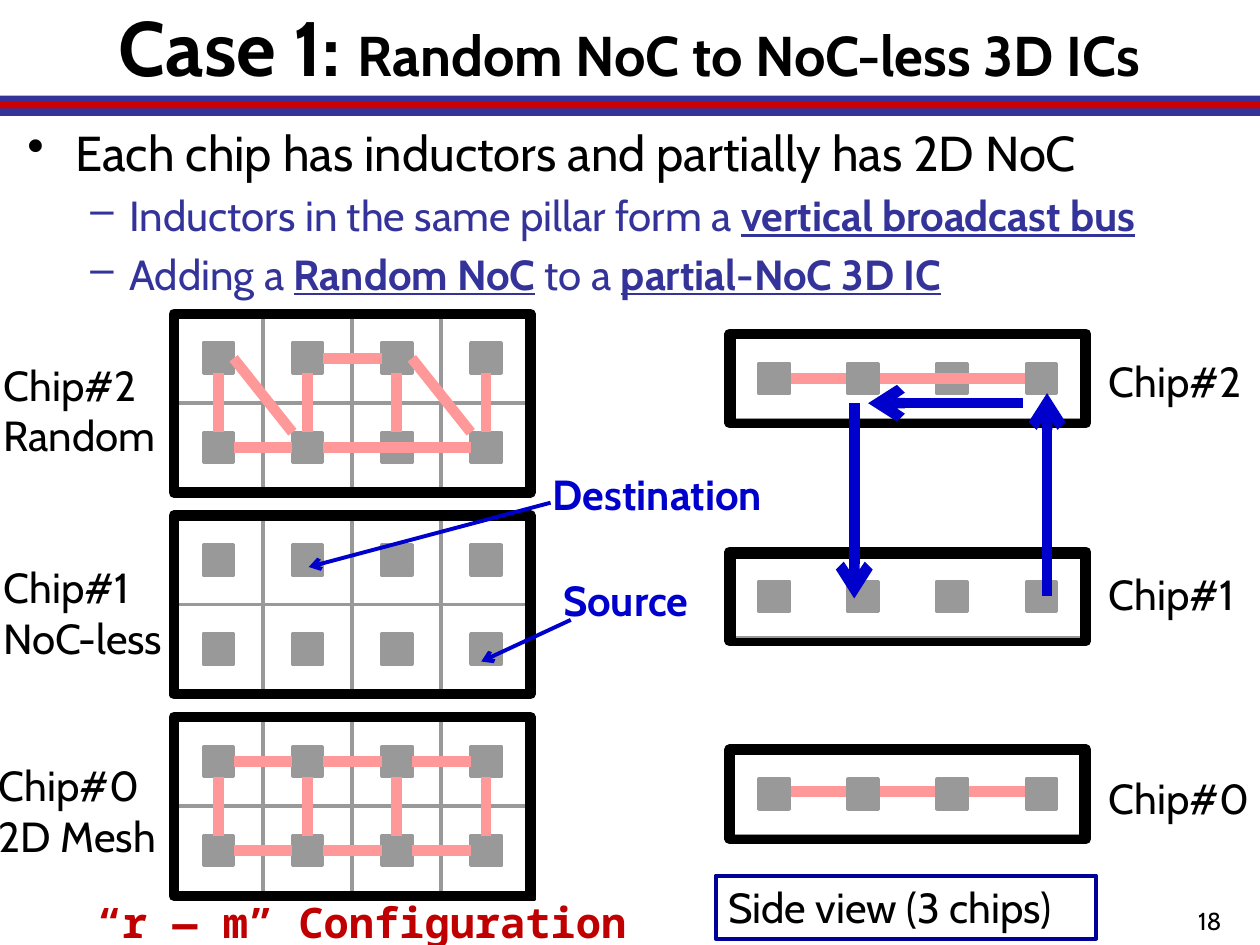
"""Build the slide on adding a random NoC to NoC-less 3D ICs."""
from dataclasses import dataclass

from lxml import etree
from pptx import Presentation
from pptx import util as u
from pptx.dml.color import RGBColor
from pptx.enum import shapes as s
from pptx.enum import text as t
from pptx.oxml.ns import qn

COLORS = {
    "black": "000000", "white": "FFFFFF", "link": "FF0000", "path": "0000CC",
    "bar": "333399", "stripe": "CC0000", "caption": "C00000", "border": "000099",
}
FONT = "Cabin"
COLUMNS, ROWS = 4, 2
CHIP_WIDTH, CHIP_HEIGHT = 2.83, 1.42
PITCH = CHIP_WIDTH / COLUMNS
NODE = 0.24
INSET = (PITCH - NODE) / 2
CHIP_LEFT, SIDE_LEFT = 1.38, 5.79

Point = tuple[float, float]
Node = tuple[int, int]


@dataclass(frozen=True)
class Chip:
    top: float
    links: tuple[tuple[Node, Node], ...] = ()
    veil_shift: Point = (0, 0)


@dataclass(frozen=True)
class SideChip:
    top: float
    veil_left: float
    veil_top: float
    nodes_below_link: int = 0
    linked: bool = False


@dataclass(frozen=True)
class Label:
    left: float
    top: float
    width: float
    height: float
    lines: tuple[str, ...]
    color: str = "black"
    bold: bool = False
    font: str = FONT
    size: float = 24


@dataclass(frozen=True)
class Arrow:
    tip: Point
    tail: Point
    weight: float = 6


@dataclass(frozen=True)
class Bullet:
    mark: str
    margin: float
    indent: float
    size: float
    color: str
    runs: tuple[tuple[str, bool], ...]


MESH = tuple(((c, r), (c + 1, r)) for r in range(ROWS) for c in range(COLUMNS - 1)) + tuple(
    ((c, 0), (c, 1)) for c in range(COLUMNS))
RANDOM = tuple(((c, 0), (c, 1)) for c in range(COLUMNS)) + (
    ((1, 0), (2, 0)), ((0, 1), (1, 1)), ((1, 1), (3, 1)),
    ((0, 0), (1, 1)), ((2, 0), (3, 1)))
CHIPS = (Chip(2.49, RANDOM), Chip(4.09, (), (0, 0.02)), Chip(5.69, MESH, (0.03, 0.03)))
SIDE_CHIPS = (SideChip(2.65, 5.83, 2.68, 3, True), SideChip(4.38, 5.83, 4.42),
              SideChip(5.95, 5.82, 5.98, 0, True))
LABELS = (
    Label(-0.07, 2.8, 2.08, 0.91, ("Chip#2", "Random")),
    Label(-0.07, 4.41, 2.08, 0.91, ("Chip#1", "NoC-less")),
    Label(-0.11, 5.98, 2.11, 0.91, ("Chip#0", "2D Mesh")),
    Label(8.7, 2.77, 1.42, 0.5, ("Chip#2",)),
    Label(8.7, 4.46, 1.42, 0.5, ("Chip#1",)),
    Label(8.7, 6.08, 1.42, 0.5, ("Chip#0",)),
    Label(4.37, 4.51, 1.42, 0.5, ("Source",), "path", True),
    Label(4.29, 3.67, 2.28, 0.5, ("Destination",), "path", True),
    Label(0.67, 7.07, 4.65, 0.5, ("“r ― m” Configuration",), "caption", True, "Noto Sans Mono"),
    Label(9.41, 7.14, 0.68, 0.4, ("18",), size=14),
)
ARROWS = (
    Arrow((8.31, 3.12), (8.31, 4.73)),
    Arrow((6.89, 3.2), (8.12, 3.2)),
    Arrow((6.78, 4.75), (6.78, 3.2)),
    Arrow((3.82, 5.25), (4.53, 4.92), 2.25),
    Arrow((2.45, 4.5), (4.37, 3.99), 2.25),
)
BULLETS = (
    Bullet("•", 0.38, -0.38, 28, "black",
           (("Each chip has inductors and partially has 2D NoC", False),)),
    Bullet("–", 0.81, -0.31, 24, "bar",
           (("Inductors in the same pillar form a ", False), ("vertical broadcast bus", True))),
    Bullet("–", 0.81, -0.31, 24, "bar",
           (("Adding a ", False), ("Random NoC", True), (" to a ", False),
            ("partial-NoC 3D IC", True))),
)


def add_run(paragraph, text: str, *, size: float = 24, color: str = "black",
            bold: bool = False, underline: bool = False, font: str = FONT) -> None:
    run = paragraph.add_run()
    run.text = text
    run.font.size, run.font.name = u.Pt(size), font
    run.font.bold, run.font.underline = bold, underline
    run.font.color.rgb = RGBColor.from_string(COLORS[color])


def add_box(slide, left: float, top: float, width: float, height: float, *,
            fill: str | None = None, line: str | None = "black", weight: float = 2,
            opacity: int = 100):
    shape = slide.shapes.add_shape(s.MSO_SHAPE.RECTANGLE, *map(u.Inches, (left, top, width, height)))
    shape.shadow.inherit = False
    if fill:
        shape.fill.solid()
        shape.fill.fore_color.rgb = RGBColor.from_string(COLORS[fill])
        if opacity < 100:
            color = shape.element.spPr.find(qn("a:solidFill"))[0]
            etree.SubElement(color, qn("a:alpha"), val=str(opacity * 1000))
    else:
        shape.fill.background()
    if line:
        shape.line.color.rgb = RGBColor.from_string(COLORS[line])
        shape.line.width = u.Pt(weight)
    else:
        shape.line.fill.background()
    return shape


def add_line(slide, start: Point, end: Point, color: str = "link", weight: float = 6,
             arrow: bool = False) -> None:
    connector = slide.shapes.add_connector(
        s.MSO_CONNECTOR.STRAIGHT, *map(u.Inches, (*start, *end)))
    connector.line.color.rgb = RGBColor.from_string(COLORS[color])
    connector.line.width = u.Pt(weight)
    properties = connector.element.spPr
    if arrow:
        etree.SubElement(properties.find(qn("a:ln")), qn("a:headEnd"), type="arrow")
    etree.SubElement(properties, qn("a:effectLst"))


def add_text_box(slide, left: float, top: float, width: float, height: float):
    frame = slide.shapes.add_textbox(*map(u.Inches, (left, top, width, height))).text_frame
    frame.word_wrap = True
    return frame


def next_paragraph(frame, index: int):
    return frame.add_paragraph() if index else frame.paragraphs[0]


def add_label(slide, label: Label) -> None:
    frame = add_text_box(slide, label.left, label.top, label.width, label.height)
    for index, line in enumerate(label.lines):
        add_run(next_paragraph(frame, index), line, size=label.size, color=label.color,
                bold=label.bold, font=label.font)


def add_bullets(slide, bullets: tuple[Bullet, ...]) -> None:
    frame = add_text_box(slide, 0.12, 0.92, 9.96, 1.57)
    for index, bullet in enumerate(bullets):
        paragraph = next_paragraph(frame, index)
        paragraph.space_before = u.Pt(bullet.size * 0.2)
        properties = paragraph._p.get_or_add_pPr()
        properties.set("marL", str(u.Inches(bullet.margin)))
        properties.set("indent", str(u.Inches(bullet.indent)))
        etree.SubElement(properties, qn("a:buChar"), char=bullet.mark)
        for text, strong in bullet.runs:
            add_run(paragraph, text, size=bullet.size, color=bullet.color,
                    bold=strong, underline=strong)


def add_link(slide, chip: Chip, first: Node, second: Node) -> None:
    (x1, y1), (x2, y2) = (
        (CHIP_LEFT + c * PITCH + INSET, chip.top + r * PITCH + INSET) for c, r in (first, second))
    half = NODE / 2
    if first[0] == second[0]:
        add_line(slide, (x1 + half, y1 + NODE), (x2 + half, y2))
    else:
        drop = half if first[1] == second[1] else 0
        add_line(slide, (x1 + NODE, y1 + half), (x2, y2 + drop))


def add_chip(slide, chip: Chip) -> None:
    for column in range(COLUMNS):
        for row in range(ROWS):
            left, top = CHIP_LEFT + column * PITCH, chip.top + row * PITCH
            add_box(slide, left, top, PITCH, PITCH, fill="white")
            add_box(slide, left + INSET, top + INSET, NODE, NODE, fill="black")
    for first, second in chip.links:
        add_link(slide, chip, first, second)
    dx, dy = chip.veil_shift
    add_box(slide, CHIP_LEFT + dx, chip.top + dy, CHIP_WIDTH, CHIP_HEIGHT, fill="white", opacity=60)
    add_box(slide, CHIP_LEFT, chip.top, CHIP_WIDTH, CHIP_HEIGHT, weight=6)


def add_side_chip(slide, chip: SideChip) -> None:
    left, top = SIDE_LEFT + INSET, chip.top + INSET
    link_y = top + NODE / 2 if chip.nodes_below_link else top + 0.1
    for column in (2, 0, 1, 3):
        if chip.linked and column == (0 if chip.nodes_below_link else 2):
            add_line(slide, (left + 3 * PITCH, link_y), (left + NODE, link_y))
        add_box(slide, left + column * PITCH, top, NODE, NODE, fill="black")
    add_box(slide, SIDE_LEFT, chip.top, CHIP_WIDTH, PITCH, weight=6)
    add_box(slide, chip.veil_left, chip.veil_top, 2.76, 0.66, fill="white", opacity=60)


def add_title(slide) -> None:
    title = slide.shapes.title
    title.left, title.top, title.width, title.height = map(u.Inches, (0, -0.03, 10, 0.79))
    frame = title.text_frame
    frame.auto_size = t.MSO_AUTO_SIZE.NONE
    frame.vertical_anchor = t.MSO_ANCHOR.MIDDLE
    paragraph = frame.paragraphs[0]
    paragraph.alignment = t.PP_ALIGN.CENTER
    add_run(paragraph, "Case 1: ", size=44, bold=True)
    add_run(paragraph, "Random NoC to NoC-less 3D ICs", size=32, bold=True)


def add_side_caption(slide) -> None:
    frame = add_box(slide, 5.68, 6.95, 3.02, 0.5, fill="white", line="border", weight=2.25).text_frame
    frame.word_wrap = False
    frame.vertical_anchor = t.MSO_ANCHOR.TOP
    frame.paragraphs[0].alignment = t.PP_ALIGN.LEFT
    add_run(frame.paragraphs[0], "Side view (3 chips)")


def main() -> None:
    presentation = Presentation()
    presentation.slide_width, presentation.slide_height = u.Inches(10), u.Inches(7.5)
    slide = presentation.slides.add_slide(presentation.slide_layouts[5])
    add_box(slide, 0, 0.76, 10.01, 0.16, fill="bar", line=None)
    add_box(slide, 0, 0.81, 10.01, 0.05, fill="stripe", line=None)
    add_title(slide)
    add_bullets(slide, BULLETS)
    for chip in CHIPS:
        add_chip(slide, chip)
    for side_chip in SIDE_CHIPS:
        add_side_chip(slide, side_chip)
    add_side_caption(slide)
    for label in LABELS:
        add_label(slide, label)
    for arrow in ARROWS:
        add_line(slide, arrow.tip, arrow.tail, "path", arrow.weight, arrow=True)
    presentation.save("out.pptx")


if __name__ == "__main__":
    main()
